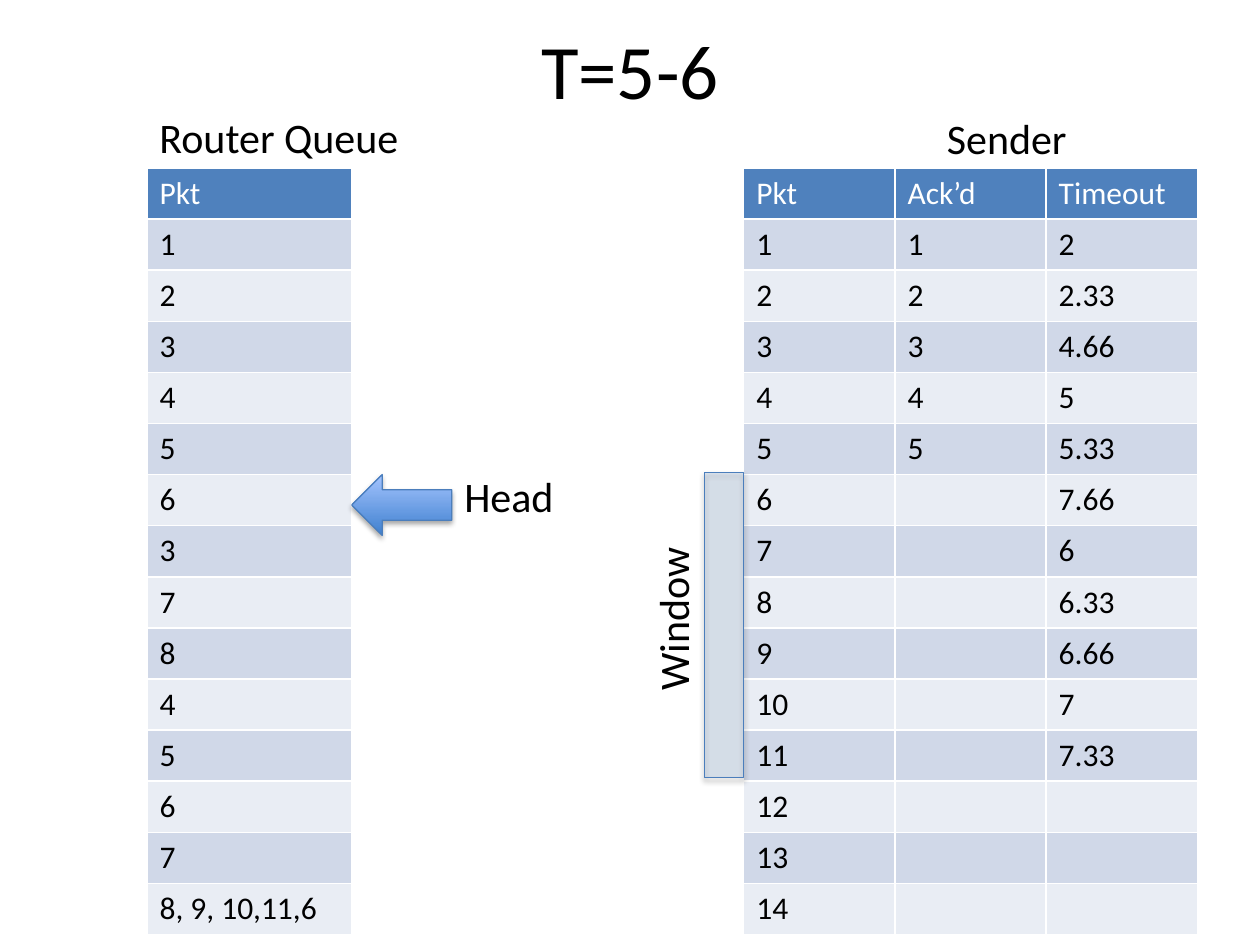
from lxml import etree
from pptx import Presentation
from pptx.dml.color import RGBColor
from pptx.enum.shapes import MSO_SHAPE
from pptx.enum.text import MSO_ANCHOR, MSO_AUTO_SIZE, PP_ALIGN
from pptx.oxml.ns import qn
from pptx.util import Pt

RECTANGLE, LEFT_ARROW = MSO_SHAPE.RECTANGLE, MSO_SHAPE.LEFT_ARROW
MIDDLE, CENTER = MSO_ANCHOR.MIDDLE, PP_ALIGN.CENTER
FIT_SHAPE = MSO_AUTO_SIZE.SHAPE_TO_FIT_TEXT

# Content
TITLE = "T=5-6"
ROUTER_QUEUE = [[text] for text in (
    "Pkt", "1", "2", "3", "4", "5", "6", "3", "7", "8", "4", "5", "6", "7",
    "8, 9, 10,11,6")]
TIMEOUTS = ["2", "2.33", "4.66", "5", "5.33", "7.66", "6", "6.33", "6.66",
            "7", "7.33", "", "", ""]
LAST_ACKED = 5
SENDER = [["Pkt", "Ack’d", "Timeout"]] + [
    [str(packet), str(packet) if packet <= LAST_ACKED else "", timeout]
    for packet, timeout in enumerate(TIMEOUTS, 1)]
WINDOW_SIZE = 6

# Layout in points
TABLE_TOP, ROW_HEIGHT = 96, 29.2
QUEUE_LEFT, QUEUE_WIDTH = 84, 117
SENDER_LEFT, SENDER_COLUMN = 425, 86.4
LABEL_HEIGHT = 36.35
WINDOW_WIDTH = 22.6
ARROW_TOP, ARROW_WIDTH, ARROW_HEIGHT = 271.2, 57.2, 34.8

# Look
FONT = "Calibri"
BLACK, WHITE, BLUE, OUTLINE = "000000", "FFFFFF", "4F81BD", "4B7EBC"
BANDS = ["E9EDF4", "D0D8E8"]


def color(value):
    return RGBColor.from_string(value)


def format_text(frame, size, value):
    for span in frame.paragraphs[0].runs:
        span.font.name = FONT
        span.font.size = Pt(size)
        span.font.color.rgb = color(value)


def add_label(shapes, text, left, top, width, height=LABEL_HEIGHT, size=24):
    box = shapes.add_textbox(Pt(left), Pt(top), Pt(width), Pt(height))
    box.text_frame.text = text
    box.text_frame.word_wrap = False
    format_text(box.text_frame, size, BLACK)
    return box


def add_grid(shapes, rows, left, column_width):
    columns = len(rows[0])
    table = shapes.add_table(
        len(rows), columns, Pt(left), Pt(TABLE_TOP),
        Pt(column_width * columns), Pt(ROW_HEIGHT * len(rows))).table
    for column in table.columns:
        column.width = Pt(column_width)
    for index, row in enumerate(rows):
        table.rows[index].height = Pt(ROW_HEIGHT)
        for cell, text in zip(table.rows[index].cells, row):
            cell.text_frame.text = text
            format_text(cell.text_frame, 18, BLACK if index else WHITE)
            cell.fill.solid()
            cell.fill.fore_color.rgb = color(BANDS[index % 2] if index else BLUE)


def add_marker(shapes, kind, left, top, width, height):
    """Outlined shape with a soft shadow below it."""
    shape = shapes.add_shape(kind, Pt(left), Pt(top), Pt(width), Pt(height))
    shape.line.color.rgb = color(OUTLINE)
    shape.line.width = Pt(0.75)
    shape.shadow.inherit = False
    effects = shape._element.spPr.find(qn("a:effectLst"))
    shadow = etree.SubElement(
        effects, qn("a:outerShdw"), blurRad=str(Pt(3.1)), dist=str(Pt(1.8)),
        dir="5400000", rotWithShape="0")
    tint = etree.SubElement(shadow, qn("a:srgbClr"), val=BLACK)
    etree.SubElement(tint, qn("a:alpha"), val="35000")
    return shape


deck = Presentation()
deck.slide_width, deck.slide_height = Pt(720), Pt(540)
page = deck.slides.add_slide(deck.slide_layouts[6])

# Title
title = add_label(page.shapes, TITLE, 36, -6, 648, 90, 44)
title.text_frame.word_wrap = True
title.text_frame.vertical_anchor = MIDDLE
title.text_frame.paragraphs[0].alignment = CENTER

# Tables and their headings
add_grid(page.shapes, ROUTER_QUEUE, QUEUE_LEFT, QUEUE_WIDTH)
add_grid(page.shapes, SENDER, SENDER_LEFT, SENDER_COLUMN)
queue_heading = add_label(page.shapes, "Router Queue", QUEUE_LEFT, 60, 152.6)
sender_heading = add_label(page.shapes, "Sender", 534, 61, 83.5)

# Window beside the packets still waiting for an acknowledgement
window = page.shapes.add_group_shape().shapes
bar = add_marker(window, RECTANGLE, SENDER_LEFT - WINDOW_WIDTH,
                 TABLE_TOP + ROW_HEIGHT * (LAST_ACKED + 1) - 1,
                 WINDOW_WIDTH, ROW_HEIGHT * WINDOW_SIZE - 1)
bar.fill.solid()
bar.fill.fore_color.rgb = color(BLUE)
bar_color = bar._element.spPr.find(qn("a:solidFill")).find(qn("a:srgbClr"))
etree.SubElement(bar_color, qn("a:alpha"), val="17000")
window_label = add_label(window, "Window", 335.8, 335, 97.2)
window_label.rotation = 270

# Arrow at the head of the queue
head = page.shapes.add_group_shape().shapes
arrow_left = QUEUE_LEFT + QUEUE_WIDTH
arrow = add_marker(head, LEFT_ARROW, arrow_left, ARROW_TOP,
                   ARROW_WIDTH, ARROW_HEIGHT)
arrow.fill.gradient()
arrow.fill.gradient_angle = 90
for stop, value in zip(arrow.fill.gradient_stops, ("3F80CE", "A4C4FF")):
    stop.color.rgb = color(value)
head_label = add_label(head, "Head", arrow_left + ARROW_WIDTH, 265.6, 66.2)

for label in (queue_heading, sender_heading, window_label, head_label):
    label.text_frame.auto_size = FIT_SHAPE

deck.save("out.pptx")
